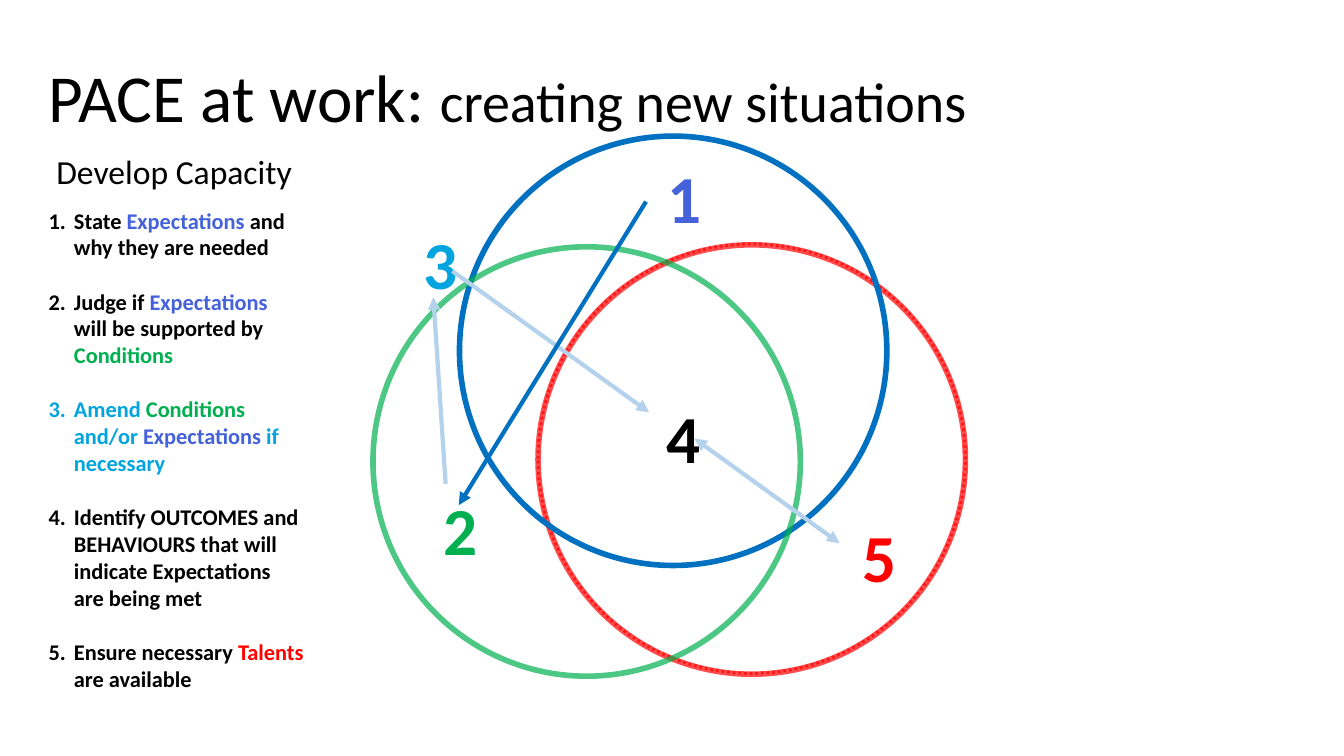
from pptx import Presentation
from pptx.dml.color import RGBColor
from pptx.enum.dml import MSO_LINE
from pptx.enum.shapes import MSO_CONNECTOR, MSO_SHAPE
from pptx.enum.text import MSO_ANCHOR, MSO_AUTO_SIZE as AutoSize, PP_ALIGN
from pptx.oxml.ns import qn
from pptx.util import Cm, Pt
from lxml.etree import SubElement

BLACK = RGBColor(0x00, 0x00, 0x00)
RED = RGBColor(0xFF, 0x00, 0x00)
GREEN = RGBColor(0x00, 0xB0, 0x50)
BLUE = RGBColor(0x00, 0x70, 0xC0)
VIOLET = RGBColor(0x45, 0x62, 0xDB)
CYAN = RGBColor(0x00, 0xA4, 0xDE)
PALE = RGBColor(0xB5, 0xD2, 0xEC)
FONT = "Calibri"

# Content: lengths in centimetres
TITLE = [("PACE at work: ", 48), ("creating new situations", 40)]
HEADING = "Develop Capacity"
STEPS = [
    [("State", BLACK), (" Expectations ", VIOLET), ("and why they are needed", BLACK)],
    [("Judge if ", BLACK), ("Expectations ", VIOLET),
     ("will be supported by ", BLACK), ("Conditions", GREEN)],
    [("Amend ", CYAN), ("Conditions", GREEN), (" and/or ", CYAN),
     ("Expectations", VIOLET), (" if necessary", CYAN)],
    [("Identify OUTCOMES and BEHAVIOURS that will indicate Expectations are being met",
      BLACK)],
    [("Ensure necessary", BLACK), (" Talents ", RED), ("are available", BLACK)],
]
# left, top, colour, line width, dash, opacity in percent
CIRCLES = [
    (13.56, 6.15, RED, 2, MSO_LINE.ROUND_DOT, 70),
    (13.56, 6.17, RED, 4, MSO_LINE.SOLID, 70),
    (11.58, 3.43, BLUE, 4, MSO_LINE.SOLID, 100),
    (9.4, 6.22, GREEN, 4, MSO_LINE.SOLID, 70),
]
CIRCLE_SIZE = (10.77, 10.82)
# left, top, colour of the numbers 1 to 5
NUMBERS = [
    (16.56, 3.81, VIOLET),
    (10.92, 12.19, GREEN),
    (10.41, 5.49, CYAN),
    (16.54, 9.86, BLACK),
    (21.49, 12.85, RED),
]
NUMBER_SIZE = (1.37, 2.31)
# start, end, colour, ends that carry an arrowhead
ARROWS = [
    ((11.23, 12.19), (10.92, 7.49), PALE, ["tailEnd"]),
    ((17.5, 11.05), (21.16, 13.69), PALE, ["headEnd", "tailEnd"]),
    ((11.4, 6.83), (16.36, 10.39), PALE, ["tailEnd"]),
    ((16.28, 5.08), (11.56, 12.73), BLUE, ["tailEnd"]),
]


def place(shape, left, top, width, height):
    shape.left, shape.top = Cm(left), Cm(top)
    shape.width, shape.height = Cm(width), Cm(height)
    frame = shape.text_frame
    frame.auto_size = AutoSize.NONE
    frame.vertical_anchor = MSO_ANCHOR.TOP
    return frame


def add_span(para, text, color):
    span = para.add_run()
    span.text = text
    span.font.color.rgb = color
    return span


def add_label(page, area, text, size, color, bold=False, align=PP_ALIGN.LEFT):
    box = page.shapes.add_textbox(0, 0, 0, 0)
    frame = place(box, *area)
    frame.word_wrap = False
    para = frame.paragraphs[0]
    para.text = text
    para.alignment = align
    para.font.name, para.font.size, para.font.bold = FONT, Pt(size), bold
    para.font.color.rgb = color


def number_paragraph(para):
    props = para._p.get_or_add_pPr()
    props.set("marL", str(Cm(0.64)))
    props.set("indent", str(-Cm(0.64)))
    SubElement(props, qn("a:buFont"), typeface="+mj-lt")
    SubElement(props, qn("a:buAutoNum"), type="arabicPeriod")


def add_circle(page, left, top, color, width, dash, opacity):
    circle = page.shapes.add_shape(
        MSO_SHAPE.OVAL, Cm(left), Cm(top), *map(Cm, CIRCLE_SIZE))
    circle.shadow.inherit = False
    circle.fill.background()
    circle.line.color.rgb = color
    circle.line.width = Pt(width)
    circle.line.dash_style = dash
    if opacity < 100:
        shade = circle.element.spPr.find(".//" + qn("a:srgbClr"))
        SubElement(shade, qn("a:alpha"), val=str(opacity * 1000))


def add_arrow(page, start, end, color, heads):
    arrow = page.shapes.add_connector(
        MSO_CONNECTOR.STRAIGHT, *map(Cm, start + end))
    arrow.line.color.rgb = color
    arrow.line.width = Pt(3)
    for head in heads:
        SubElement(arrow.get_or_add_ln(), qn("a:" + head), type="triangle")
    SubElement(arrow._element.spPr, qn("a:effectLst"))


def main():
    deck = Presentation()
    deck.slide_width, deck.slide_height = Cm(33.87), Cm(19.05)
    page = deck.slides.add_slide(deck.slide_layouts[1])

    # Title
    para = place(page.shapes.title, 0.97, 1.27, 31.29, 2.31).paragraphs[0]
    para.alignment = PP_ALIGN.LEFT
    para.font.name = FONT
    for text, size in TITLE:
        add_span(para, text, BLACK).font.size = Pt(size)

    # Numbered steps
    frame = place(page.placeholders[1], 0.97, 5.08, 6.96, 13.94)
    for index, step in enumerate(STEPS):
        para = frame.add_paragraph() if index else frame.paragraphs[0]
        para.space_before = Pt(19.5 if index else 0)
        number_paragraph(para)
        para.font.name, para.font.size, para.font.bold = FONT, Pt(16), True
        for text, color in step:
            add_span(para, text, color)

    # Overlapping circles
    for circle in CIRCLES:
        add_circle(page, *circle)

    # Heading and numbers
    add_label(page, (1.17, 3.68, 6.5, 1.27), HEADING, 24, BLACK)
    for number, (left, top, color) in enumerate(NUMBERS, start=1):
        add_label(page, (left, top, *NUMBER_SIZE), str(number), 48, color,
                  bold=True, align=PP_ALIGN.CENTER)

    # Arrows between the numbers
    for arrow in ARROWS:
        add_arrow(page, *arrow)

    deck.save("out.pptx")


if __name__ == "__main__":
    main()
